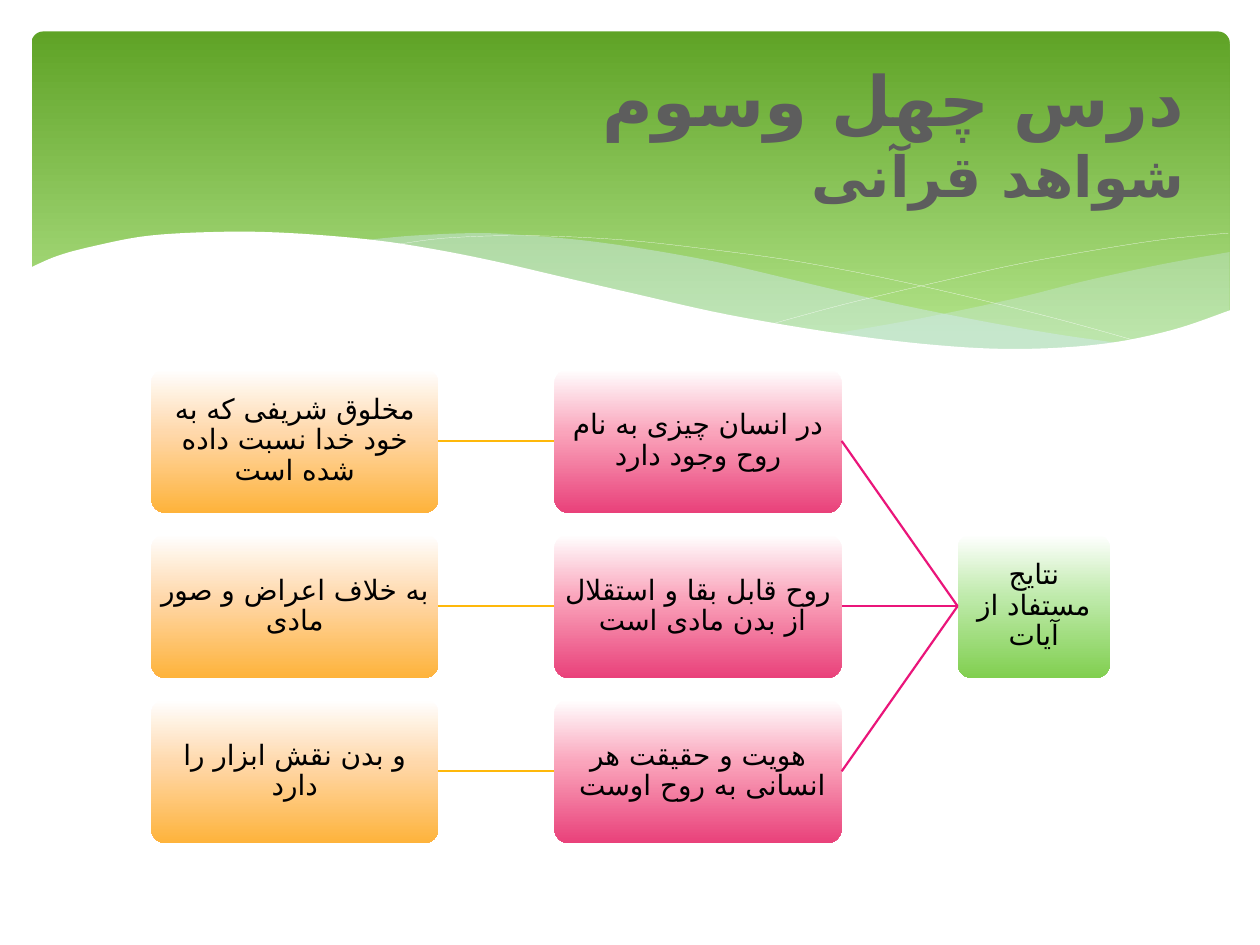
"""Build a right-to-left slide with a wavy green header and a three-level tree."""
import pptx
import pptx.dml.color
import pptx.enum.shapes
import pptx.enum.text
import pptx.oxml.ns
import pptx.util
from lxml import etree

W, H = 10, 7.5
FONT, ARABIC_FONT = "Cabin", "DejaVu Sans"
COLORS = {"white": "FFFFFF", "black": "000000", "title": "5D5D5D", "mist": "D6ECFF",
          "pink": "EA157A", "amber": "FEB80A"}
GRADIENTS = {
    "header": [(0, "5FA326"), (90, "B2E389")],
    "green": [(0, "FFFFFF"), (44, "BEEAAA"), (100, "81CF50")],
    "pink": [(0, "FFFFFF"), (44, "FAA4BB"), (100, "E9417A")],
    "amber": [(0, "FFFFFF"), (44, "FFD8AB"), (100, "FEB33B")],
}
TITLE = [("درس چهل وسوم", 39.6), ("شواهد قرآنی", 32.4)]
ROOT = "نتایج مستفاد از آیات"
BRANCHES = [
    ("در انسان چیزی به نام روح وجود دارد", "مخلوق شریفی که به خود خدا نسبت داده شده است"),
    ("روح قابل بقا و استقلال از بدن مادی است ", "به خلاف اعراض و صور مادی"),
    ("هویت و حقیقت هر انسانی به روح اوست ", "و بدن نقش ابزار را دارد"),
]
RIGHT_MIST = [
    [(9.76, 2), (9.21, 2.1), (8.61, 2.23), (8.05, 2.37), (7.29, 2.53), (6.61, 2.65)],
    [(6.61, 2.65), (7.05, 2.71), (7.57, 2.76), (8.03, 2.78), (8.54, 2.76), (9.05, 2.69),
     (9.42, 2.59), (9.76, 2.47)],
]
LEFT_MIST = [
    [(8.93, 2.73), (8.37, 2.65), (7.75, 2.54), (7.06, 2.4), (6.29, 2.22), (5.69, 2.08),
     (5.14, 1.98), (4.65, 1.91), (4.2, 1.87), (3.8, 1.85), (3.28, 1.87), (2.86, 1.91)],
    [(2.86, 1.91), (3.42, 1.99), (4.04, 2.11), (4.91, 2.32), (5.66, 2.48), (6.34, 2.61),
     (6.95, 2.7), (7.48, 2.76), (7.96, 2.78), (8.48, 2.77), (8.93, 2.73)],
]
FALLING_LINE = [[(3.09, 1.95), (3.53, 1.89), (4.16, 1.87), (4.89, 1.9), (5.56, 1.97), (6.36, 2.08),
                 (7.27, 2.26), (8.31, 2.51), (9.07, 2.72)]]
RISING_LINE = [[(6.13, 2.57), (6.72, 2.41), (7.48, 2.23), (8.06, 2.1), (8.66, 1.99), (9.24, 1.9),
                (9.75, 1.85)]]
WHITE_WAVE = [
    [(9.77, 2.46), (9.3, 2.62), (8.75, 2.73), (8.09, 2.77), (7.44, 2.74), (6.68, 2.65),
     (5.79, 2.5), (5.03, 2.33), (4.47, 2.2), (3.91, 2.07), (3.4, 1.97), (2.92, 1.9),
     (2.3, 1.85), (1.77, 1.84), (1.19, 1.87), (0.76, 1.95), (0.46, 2.03), (0.23, 2.13)],
    [(0.23, 3.29), (9.77, 3.29)],
]
WAVES = [(RIGHT_MIST, "mist", 29), (LEFT_MIST, "mist", 40), (FALLING_LINE, None, 0),
         (RISING_LINE, None, 0), (WHITE_WAVE, "white", 100)]
BOX_W, BOX_H, ROOT_W = 0.228 * W, 0.152 * H, 0.121 * W
COL_X = [0.76 * W, 0.44 * W, 0.12 * W]
ROW_Y = [2.93 + 1.15 * BOX_H * i for i in range(len(BRANCHES))]

inch = pptx.util.Inches
qn = pptx.oxml.ns.qn


def rgb(name):
    return pptx.dml.color.RGBColor.from_string(COLORS[name])


def smooth(points, steps=6):
    """Return Catmull-Rom points through the given ones."""
    padded = [points[0], *points, points[-1]]
    curve = [points[0]]
    for a, b, c, d in zip(padded, padded[1:], padded[2:], padded[3:]):
        for n in range(1, steps + 1):
            t = n / steps
            curve.append(tuple(
                (2 * q + (r - p) * t + (2 * p - 5 * q + 4 * r - s) * t ** 2
                 + (3 * q - p - 3 * r + s) * t ** 3) / 2
                for p, q, r, s in zip(a, b, c, d)))
    return curve


def add_wave(shapes, curves, fill, opacity):
    points = [(inch(x), inch(y)) for curve in curves
              for x, y in (smooth(curve) if len(curve) > 2 else curve)]
    builder = shapes.build_freeform(*points[0], scale=1.0)
    builder.add_line_segments(points[1:], close=fill is not None)
    sp = builder.convert_to_shape()
    sp.shadow.inherit = False
    if fill is None:
        sp.fill.background()
        sp.line.color.rgb = rgb("white")
        sp.line.width = pptx.util.Pt(0.1)
        return
    sp.line.fill.background()
    sp.fill.solid()
    sp.fill.fore_color.rgb = rgb(fill)
    color = sp._element.spPr.find(qn("a:solidFill"))[0]
    etree.SubElement(color, qn("a:alpha"), val=str(opacity * 1000))


def add_panel(shapes, x, y, w, h, gradient, radius=0.1):
    kind = pptx.enum.shapes.MSO_SHAPE.ROUNDED_RECTANGLE
    sp = shapes.add_shape(kind, inch(x), inch(y), inch(w), inch(h))
    sp.adjustments[0] = radius
    sp.shadow.inherit = False
    sp.line.fill.background()
    sp.fill.gradient()
    sp.fill.gradient_angle = 270
    stops = sp._element.spPr.find(qn("a:gradFill")).find(qn("a:gsLst"))
    for stop in list(stops):
        stops.remove(stop)
    for position, color in GRADIENTS[gradient]:
        stop = etree.SubElement(stops, qn("a:gs"), pos=str(position * 1000))
        etree.SubElement(stop, qn("a:srgbClr"), val=color)
    return sp


def write(sp, lines, color="black", bold=False, align="CENTER", spacing=None, inset=0.01):
    tf = sp.text_frame
    tf.word_wrap = True
    tf.vertical_anchor = pptx.enum.text.MSO_ANCHOR.MIDDLE
    tf.margin_left = tf.margin_right = inset and inch(inset)
    tf.margin_top = tf.margin_bottom = inch(inset)
    p = tf.paragraphs[0]
    p.alignment = getattr(pptx.enum.text.PP_ALIGN, align)
    p.line_spacing = spacing
    p._p.get_or_add_pPr().set("rtl", "1")
    for i, (text, size) in enumerate(lines):
        if i:
            p.add_line_break()
        r = p.add_run()
        r.text = text
        r.font.name, r.font.size, r.font.bold = FONT, pptx.util.Pt(size), bold
        r.font.color.rgb = rgb(color)
        etree.SubElement(r._r.get_or_add_rPr(), qn("a:cs"), typeface=ARABIC_FONT)


def add_box(shapes, text, x, y, w, gradient):
    sp = add_panel(shapes, x, y, w, BOX_H, gradient)
    write(sp, [(text, 16)], spacing=0.9)
    return sp


def join(shapes, parent, child, color):
    cx = shapes.add_connector(pptx.enum.shapes.MSO_CONNECTOR.STRAIGHT, 0, 0, 0, 0)
    cx.begin_connect(parent, 1)
    cx.end_connect(child, 3)
    cx.line.color.rgb = rgb(color)
    cx.line.width = pptx.util.Pt(1.25)
    etree.SubElement(cx._element.spPr, qn("a:effectLst"))


def main():
    prs = pptx.Presentation()
    prs.slide_width, prs.slide_height = inch(W), inch(H)
    shapes = prs.slides.add_slide(prs.slide_layouts[6]).shapes

    add_panel(shapes, 0.25, 0.25, 9.51, 2.7, "header", radius=0.034)
    for wave in WAVES:
        add_wave(shapes, *wave)
    title = shapes.add_textbox(inch(0.05 * W), inch(0.37), inch(0.9 * W), inch(1.37))
    write(title, TITLE, color="title", bold=True, align="RIGHT", inset=0.1)

    root = add_box(shapes, ROOT, COL_X[0], ROW_Y[1], ROOT_W, "green")
    for y, (result, detail) in zip(ROW_Y, BRANCHES):
        middle = add_box(shapes, result, COL_X[1], y, BOX_W, "pink")
        leaf = add_box(shapes, detail, COL_X[2], y, BOX_W, "amber")
        join(shapes, root, middle, "pink")
        join(shapes, middle, leaf, "amber")
    prs.save("out.pptx")


if __name__ == "__main__":
    main()
